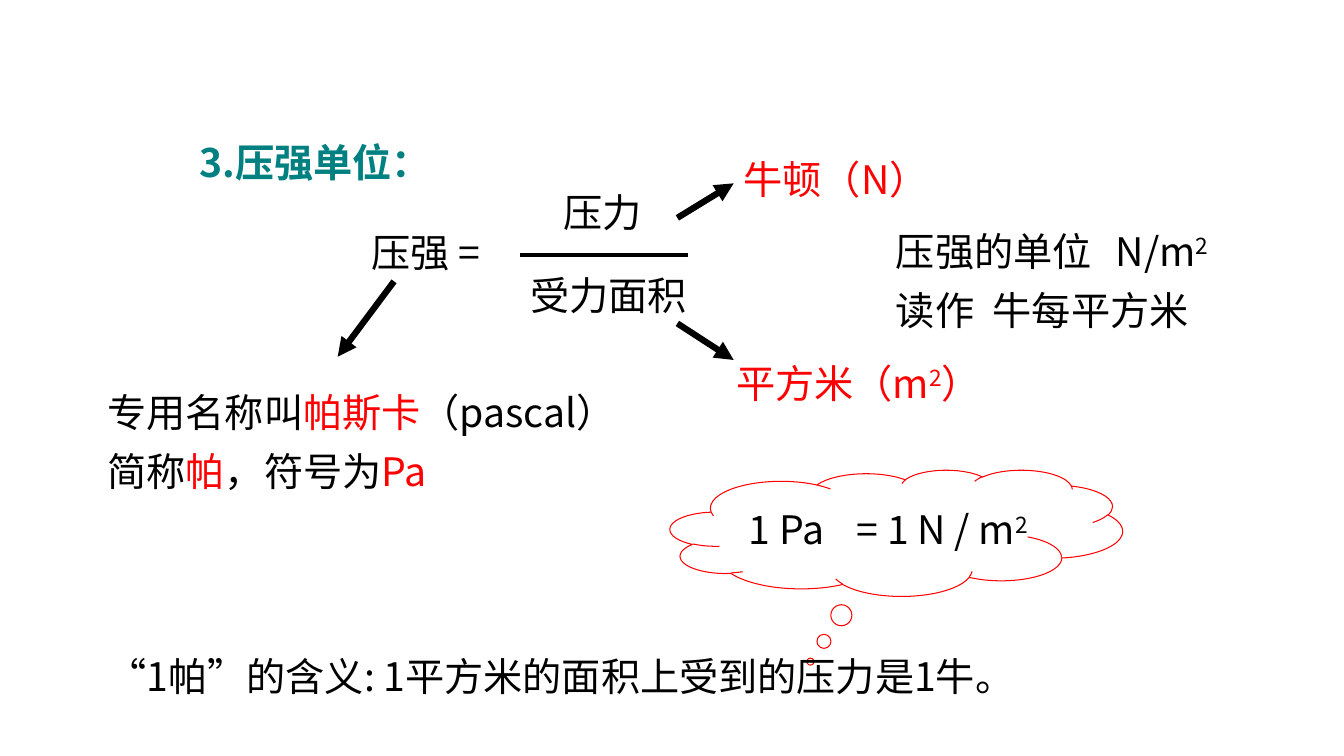
from dataclasses import dataclass

import pptx
import pptx.dml.color
import pptx.enum.dml
import pptx.enum.shapes
import pptx.enum.text
import pptx.oxml.ns
import pptx.shapes.base
import pptx.shapes.connector
import pptx.slide
import pptx.text.text
import pptx.util
from lxml import etree

Cm = pptx.util.Cm
RGBColor = pptx.dml.color.RGBColor
qn = pptx.oxml.ns.qn

BLACK = RGBColor(0x00, 0x00, 0x00)
RED = RGBColor(0xFF, 0x00, 0x00)
TEAL = RGBColor(0x00, 0x80, 0x80)
FONT = "Noto Sans CJK SC"
LINE_HEIGHT = 1.45
INSET = 0.25


@dataclass(frozen=True)
class Run:
    text: str
    color: RGBColor = BLACK
    bold: bool = False
    raised: bool = False


@dataclass(frozen=True)
class Para:
    runs: tuple[Run, ...]
    spacing: float | None = None
    tab: float | None = None


@dataclass(frozen=True)
class Label:
    left: float
    top: float
    width: float
    paras: tuple[Para, ...]
    height: float = LINE_HEIGHT
    wrap: bool = True
    indent: float = 0


@dataclass(frozen=True)
class Stroke:
    start: tuple[float, float]
    end: tuple[float, float]
    weight: float = 4.5
    arrow: bool = True


def single(text: str, color: RGBColor = BLACK) -> tuple[Para, ...]:
    return (Para((Run(text, color),)),)


TITLE = Label(4.78, 3.35, 7.16, (Para((Run("3.压强单位：", TEAL, bold=True),)),))

LABELS = (
    Label(17.63, 12.62, 10.16,
          (Para((Run("1 Pa\t= 1 N / m"), Run("2", raised=True)), tab=2.72),),
          indent=0.99),
    Label(2.46, 16.31, 28.78, single("“1帕”的含义: 1平方米的面积上受到的压力是1牛。")),
    Label(9.12, 5.64, 3.58, single("压强 ="), wrap=False),
    Label(13.94, 4.62, 3.71, single("压力")),
    Label(13.11, 6.71, 4.5, single("受力面积"), wrap=False),
    Label(2.46, 9.37, 14.38, (
        Para((Run("专用名称叫"), Run("帕斯卡", RED), Run("（pascal）")), 1.25),
        Para((Run("简称"), Run("帕", RED), Run("，符号为"), Run("Pa", RED)), 1.25),
    ), height=3.25),
    Label(18.49, 3.78, 7.34, single("牛顿（N）", RED)),
    Label(18.31, 8.92, 9.04, (
        Para((Run("平方米（m", RED), Run("2", RED, raised=True), Run("）", RED))),
    )),
    Label(22.33, 5.31, 11, (
        Para((Run("压强的单位\tN/m"), Run("2", raised=True)), 1.25, 5.54),
        Para((Run("读作\t牛每平方米"),), 1.25, 2.44),
    ), height=3.12),
)

STROKES = (
    Stroke((13.11, 6.43), (17.35, 6.43), weight=3, arrow=False),
    Stroke((9.93, 7.09), (8.51, 8.99)),
    Stroke((17.07, 5.49), (18.49, 4.62)),
    Stroke((17.07, 8.15), (18.49, 9.07)),
)


def add_run(p: pptx.text.text._Paragraph, text: str, *, color: RGBColor,
            bold: bool, raised: bool) -> None:
    r = p.add_run()
    r.text = text
    r.font.size = pptx.util.Pt(28)
    r.font.bold = bold
    r.font.color.rgb = color
    r.font.name = FONT
    rPr = r._r.get_or_add_rPr()
    etree.SubElement(rPr, qn("a:ea")).set("typeface", FONT)
    if raised:
        rPr.set("baseline", "30000")


def fill_label(sp: pptx.shapes.base.BaseShape, label: Label) -> None:
    sp.left, sp.top = Cm(label.left), Cm(label.top)
    sp.width, sp.height = Cm(label.width), Cm(label.height)
    tf = sp.text_frame
    tf.word_wrap = label.wrap
    tf.auto_size = pptx.enum.text.MSO_AUTO_SIZE.SHAPE_TO_FIT_TEXT
    tf.vertical_anchor = pptx.enum.text.MSO_ANCHOR.TOP
    tf.margin_left = Cm(INSET + label.indent)
    for i, para in enumerate(label.paras):
        p = tf.add_paragraph() if i else tf.paragraphs[0]
        if para.tab is not None:
            tabs = etree.SubElement(p._p.get_or_add_pPr(), qn("a:tabLst"))
            etree.SubElement(tabs, qn("a:tab"), pos=str(Cm(para.tab)), algn="l")
        p.alignment = pptx.enum.text.PP_ALIGN.LEFT
        if para.spacing is not None:
            p.line_spacing = para.spacing
        for run in para.runs:
            add_run(p, run.text, color=run.color, bold=run.bold, raised=run.raised)


def add_stroke(s: pptx.slide.Slide, stroke: Stroke) -> pptx.shapes.connector.Connector:
    sp = s.shapes.add_connector(
        pptx.enum.shapes.MSO_CONNECTOR.STRAIGHT,
        *(Cm(v) for v in stroke.start + stroke.end))
    sp.line.color.rgb = BLACK
    sp.line.width = pptx.util.Pt(stroke.weight)
    if stroke.arrow:
        etree.SubElement(sp.line._get_or_add_ln(), qn("a:tailEnd")).set("type", "triangle")
    etree.SubElement(sp._element.spPr, qn("a:effectLst"))
    return sp


def add_cloud(s: pptx.slide.Slide) -> None:
    sp = s.shapes.add_shape(pptx.enum.shapes.MSO_SHAPE.CLOUD_CALLOUT,
                            Cm(16.89), Cm(11.84), Cm(11.4), Cm(3.18))
    sp.adjustments[0], sp.adjustments[1] = -0.19, 1.02
    sp.shadow.inherit = False
    sp.fill.background()
    sp.line.color.rgb = RED
    sp.line.width = pptx.util.Pt(0.75)


def main() -> None:
    prs = pptx.Presentation()
    prs.slide_width, prs.slide_height = Cm(33.87), Cm(19.05)
    s = prs.slides.add_slide(prs.slide_layouts[5])
    fill_label(s.shapes.title, TITLE)
    add_cloud(s)
    for label in LABELS:
        fill_label(s.shapes.add_textbox(0, 0, 0, 0), label)
    for stroke in STROKES:
        add_stroke(s, stroke)
    prs.save("out.pptx")


if __name__ == "__main__":
    main()
